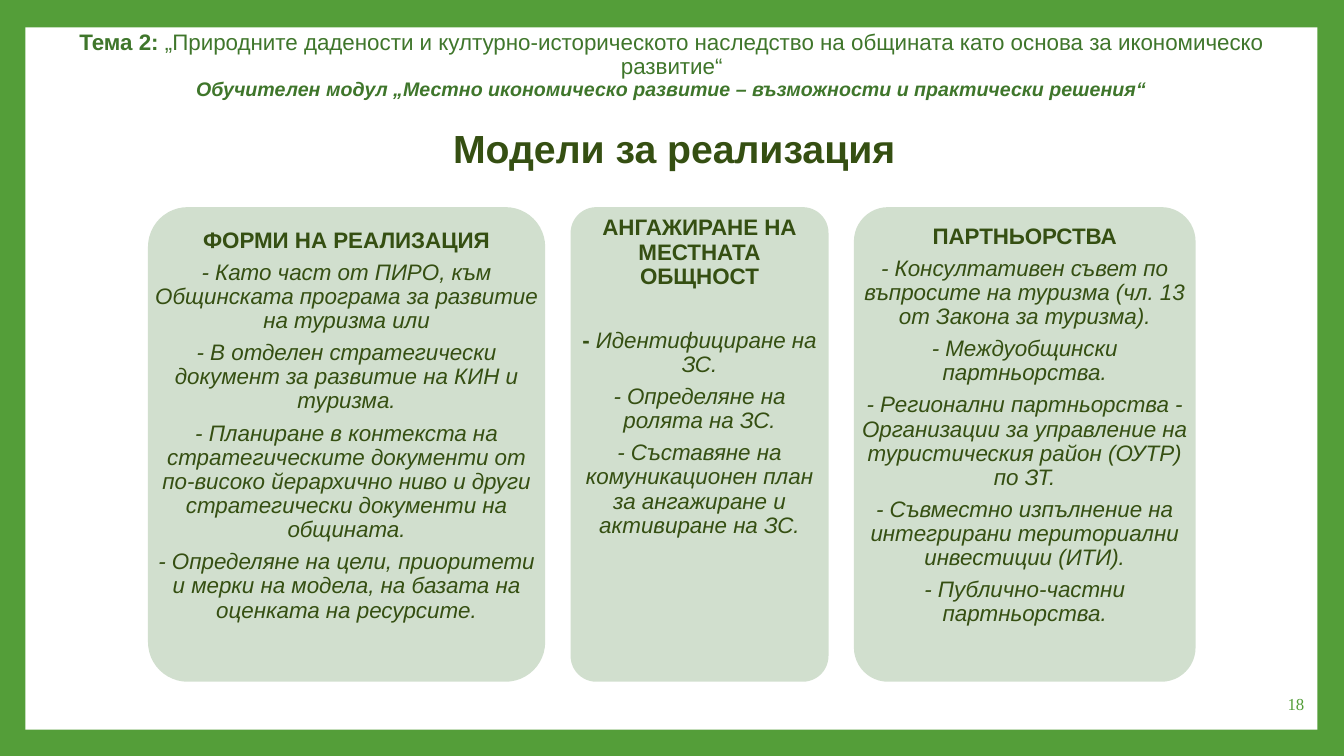
import pptx
import pptx.util
import pptx.dml.color
import pptx.enum.shapes
import pptx.enum.text
from dataclasses import dataclass

Cm = pptx.util.Cm
Pt = pptx.util.Pt
ALIGN = pptx.enum.text.PP_ALIGN
ANCHOR = pptx.enum.text.MSO_ANCHOR
SHAPES = pptx.enum.shapes.MSO_SHAPE


@dataclass(frozen=True)
class Theme:
    frame: str = "549E39"
    paper: str = "FFFFFF"
    card: str = "D1DFCE"
    dark: str = "354F12"
    topic: str = "3F762B"
    font: str = "Arial"
    number_font: str = "Times New Roman"
    title_size: int = 28
    body_size: int = 16
    module_size: int = 14
    number_size: int = 12
    line_spacing: float = 0.9
    space_after: float = 5.6


THEME = Theme()

CARD_LEFT, CARD_TOP, CARD_HEIGHT, CARD_GAP = 3.73, 5.22, 11.96, 0.64

# Each card: width, text offset from the card top, gap below the heading (pt), heading, items
CARDS = [
    (10.01, 0.37, THEME.space_after, "ФОРМИ НА РЕАЛИЗАЦИЯ", [
        "- Като част от ПИРО, към Общинската програма за развитие на туризма или",
        "- В отделен стратегически документ за развитие на КИН и туризма.",
        "- Планиране в контекста на стратегическите документи от по-високо йерархично ниво "
        "и други стратегически документи на общината.",
        "- Определяне на цели, приоритети и мерки на модела, на базата на оценката на ресурсите.",
    ]),
    (6.5, 0.06, 28.5, "АНГАЖИРАНЕ НА МЕСТНАТА ОБЩНОСТ", [
        "- Идентифициране на ЗС.",
        "- Определяне на ролята на ЗС.",
        "- Съставяне на комуникационен план за ангажиране и активиране на ЗС.",
    ]),
    (8.61, 0.27, THEME.space_after, "ПАРТНЬОРСТВА", [
        "- Консултативен съвет по въпросите на туризма (чл. 13 от Закона за туризма).",
        "- Междуобщински партньорства.",
        "- Регионални партньорства - Организации за управление на туристическия район (ОУТР) по ЗТ.",
        "- Съвместно изпълнение на интегрирани териториални инвестиции (ИТИ).",
        "- Публично-частни партньорства.",
    ]),
]


def rgb(value):
    return pptx.dml.color.RGBColor.from_string(value)


def add_panel(slide, kind, left, top, width, height, color):
    shape = slide.shapes.add_shape(kind, Cm(left), Cm(top), Cm(width), Cm(height))
    shape.shadow.inherit = False
    shape.fill.solid()
    shape.fill.fore_color.rgb = rgb(color)
    shape.line.fill.background()
    return shape


def add_text_frame(slide, left, top, width, height, anchor=ANCHOR.MIDDLE, inset=None):
    box = slide.shapes.add_textbox(Cm(left), Cm(top), Cm(width), Cm(height))
    frame = box.text_frame
    frame.word_wrap = True
    frame.vertical_anchor = anchor
    if inset is not None:
        frame.margin_left = frame.margin_right = Cm(inset)
        frame.margin_top = frame.margin_bottom = Cm(inset)
    return frame


def format_run(run, size, color, font=THEME.font, bold=False, italic=False):
    run.font.size = Pt(size)
    run.font.name = font
    run.font.color.rgb = rgb(color)
    run.font.bold = bold
    run.font.italic = italic


def write_line(paragraph, text, size, color, align=ALIGN.CENTER, **style):
    paragraph.text = text
    paragraph.alignment = align
    format_run(paragraph.runs[0], size, color, **style)


def add_header(slide):
    frame = add_text_frame(slide, 0.94, 0.79, 31.98, 1.73)
    topic = frame.paragraphs[0]
    write_line(topic, "Тема 2: ", THEME.body_size, THEME.topic, bold=True)
    subject = topic.add_run()
    subject.text = ("„Природните дадености и културно-историческото наследство "
                    "на общината като основа за икономическо развитие“")
    format_run(subject, THEME.body_size, THEME.topic)
    module = frame.add_paragraph()
    write_line(module, "Обучителен модул „Местно икономическо развитие – възможности и практически решения“",
               THEME.module_size, THEME.topic, bold=True, italic=True)
    for paragraph in frame.paragraphs:
        paragraph.line_spacing = THEME.line_spacing


def add_card(slide, left, width, text_offset, heading_gap, heading, items):
    card = add_panel(slide, SHAPES.ROUNDED_RECTANGLE, left, CARD_TOP, width, CARD_HEIGHT, THEME.card)
    card.adjustments[0] = 0.1
    frame = add_text_frame(slide, left, CARD_TOP + text_offset, width, CARD_HEIGHT - 2 * text_offset,
                           ANCHOR.TOP, inset=0.18)
    write_line(frame.paragraphs[0], heading, THEME.body_size, THEME.dark, bold=True)
    for item in items:
        write_line(frame.add_paragraph(), item, THEME.body_size, THEME.dark, italic=True)
    for paragraph in frame.paragraphs:
        paragraph.line_spacing = THEME.line_spacing
        paragraph.space_after = Pt(THEME.space_after)
    frame.paragraphs[0].space_after = Pt(heading_gap)
    # The dash before the first item of the middle card is bold and upright
    return frame.paragraphs[1]


def embolden_dash(paragraph):
    text = paragraph.runs[0].text
    paragraph.runs[0].text = text[:2]
    format_run(paragraph.runs[0], THEME.body_size, THEME.dark, bold=True)
    rest = paragraph.add_run()
    rest.text = text[2:]
    format_run(rest, THEME.body_size, THEME.dark, italic=True)


def main():
    presentation = pptx.Presentation()
    presentation.slide_width, presentation.slide_height = Cm(33.87), Cm(19.05)
    slide = presentation.slides.add_slide(presentation.slide_layouts[6])

    # Green frame around white paper
    slide.background.fill.solid()
    slide.background.fill.fore_color.rgb = rgb(THEME.frame)
    add_panel(slide, SHAPES.RECTANGLE, 0.64, 0.69, 32.56, 17.7, THEME.paper)

    # Header, title and page number
    add_header(slide)
    title = add_text_frame(slide, 3.49, 3.0, 27.0, 1.45, ANCHOR.TOP)
    write_line(title.paragraphs[0], "Модели за реализация", THEME.title_size, THEME.dark, bold=True)
    number = add_text_frame(slide, 28.37, 17.22, 4.75, 1.02)
    write_line(number.paragraphs[0], "18", THEME.number_size, THEME.frame,
               align=ALIGN.RIGHT, font=THEME.number_font)

    # Three cards side by side
    left = CARD_LEFT
    first_items = []
    for width, *content in CARDS:
        first_items.append(add_card(slide, left, width, *content))
        left += width + CARD_GAP
    embolden_dash(first_items[1])

    presentation.save("out.pptx")


if __name__ == "__main__":
    main()
